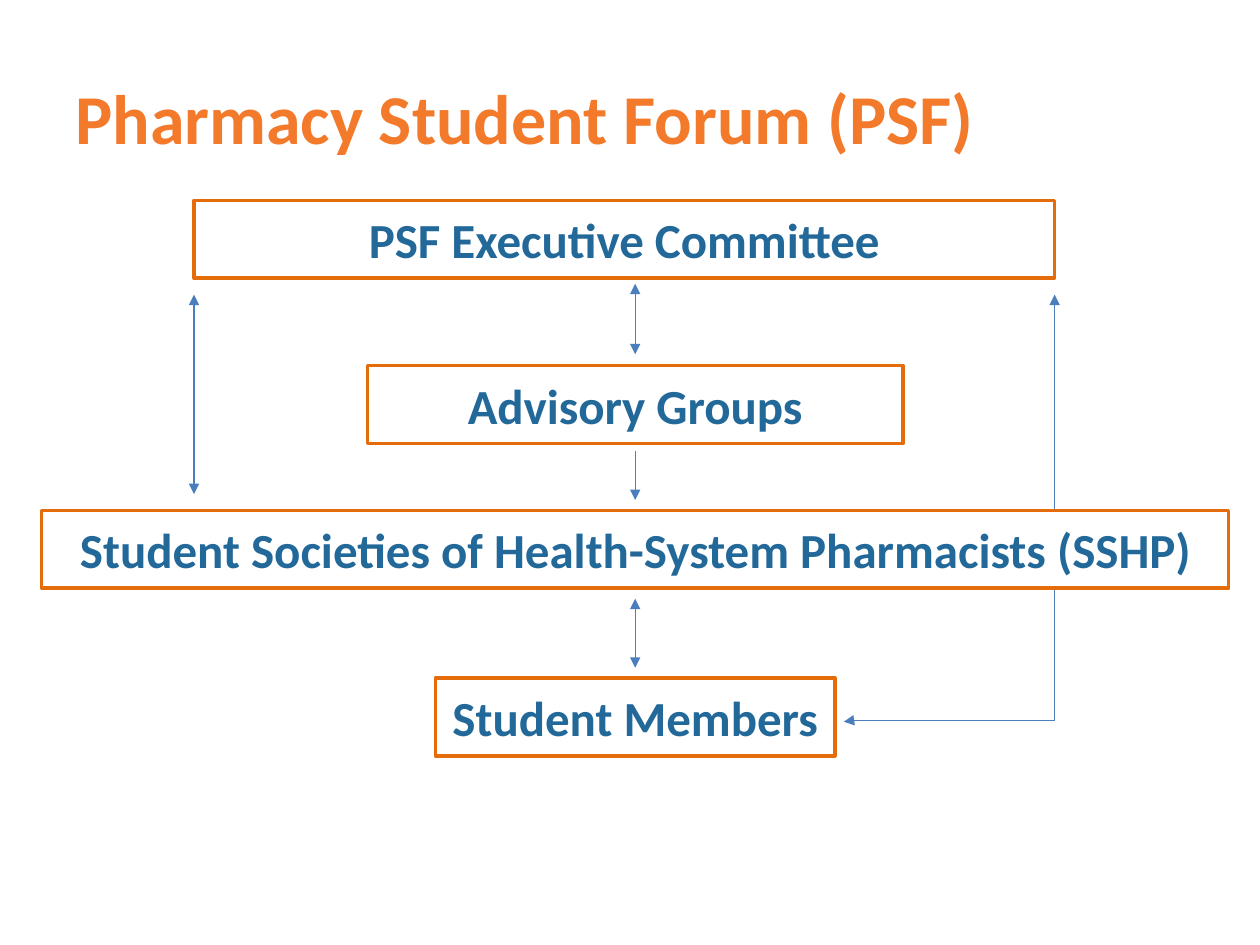
from lxml import etree
from pptx import Presentation
from pptx.dml.color import RGBColor
from pptx.enum.shapes import MSO_CONNECTOR, MSO_SHAPE
from pptx.enum.text import MSO_ANCHOR, PP_ALIGN
from pptx.oxml.ns import qn
from pptx.util import Cm, Pt

RECT = MSO_SHAPE.RECTANGLE
LINE = MSO_CONNECTOR.STRAIGHT
ELBOW = MSO_CONNECTOR.ELBOW
MIDDLE = MSO_ANCHOR.MIDDLE
LEFT = PP_ALIGN.LEFT
CENTER = PP_ALIGN.CENTER

ORANGE = "F37A2B"
BORDER = "E46C0A"
BLUE = "226899"
ARROW = "4B7EBC"
WHITE = "FFFFFF"


def tint(code):
    return RGBColor.from_string(code)


def write(shape, text, size, color, align):
    frame = shape.text_frame
    frame.text = text
    frame.vertical_anchor = MIDDLE
    para = frame.paragraphs[0]
    para.alignment = align
    font = para.runs[0].font
    font.name = "Calibri"
    font.size = Pt(size)
    font.bold = True
    font.color.rgb = tint(color)


def add_title(slide, left, top, width, height):
    box = slide.shapes.add_textbox(Cm(left), Cm(top), Cm(width), Cm(height))
    box.text_frame.word_wrap = True
    write(box, "Pharmacy Student Forum (PSF)", 40, ORANGE, LEFT)


def add_group(slide, text, left, top, width, height):
    box = slide.shapes.add_shape(RECT, Cm(left), Cm(top), Cm(width), Cm(height))
    box.shadow.inherit = False
    box.fill.solid()
    box.fill.fore_color.rgb = tint(WHITE)
    box.line.color.rgb = tint(BORDER)
    box.line.width = Pt(2)
    box.text_frame.word_wrap = False
    write(box, text, 28, BLUE, CENTER)


def add_arrow(slide, kind, start, end, ends=("headEnd", "tailEnd")):
    points = [Cm(value) for value in (*start, *end)]
    arrow = slide.shapes.add_connector(kind, *points)
    arrow.line.color.rgb = tint(ARROW)
    arrow.line.width = Pt(0.75)
    for name in ends:
        tip = etree.SubElement(arrow.line._ln, qn(f"a:{name}"))
        tip.set("type", "triangle")
    etree.SubElement(arrow._element.spPr, qn("a:effectLst"))
    return arrow


def add_elbow(slide, right, top, run, drop):
    left = right - (run + drop) / 2
    upper = top + (drop - run) / 2
    arrow = add_arrow(slide, ELBOW, (left, upper), (left + drop, upper + run))
    props = arrow._element.spPr
    props.find(qn("a:xfrm")).set("rot", "5400000")
    shape = props.find(qn("a:prstGeom"))
    guides = shape.find(qn("a:avLst"))
    if guides is None:
        guides = etree.SubElement(shape, qn("a:avLst"))
    guide = etree.SubElement(guides, qn("a:gd"))
    guide.set("name", "adj1")
    guide.set("fmla", "val 99700")


def add_chart(slide, left, top, width):
    mid = left + width / 2
    edge = left + 3.07
    deep = 1.57
    span = 17.35

    for start, end in ((1.68, 3.1), (8.03, 9.42)):
        add_arrow(slide, LINE, (mid, top + start), (mid, top + end))
    add_arrow(slide, LINE, (mid, top + 5.05), (mid, top + 6.04), ("tailEnd",))
    add_arrow(slide, LINE, (edge, top + 1.9), (edge, top + 5.92))
    add_elbow(slide, edge + span, top + 1.9, 4.25, 8.61)

    add_group(slide, "PSF Executive Committee", edge, top, span, deep)
    groups = (
        ("Advisory Groups", 3.33, 10.8),
        ("Student Members", 9.63, 8.05),
        ("Student Societies of Health-System Pharmacists (SSHP)", 6.25, width),
    )
    for text, down, wide in groups:
        add_group(slide, text, mid - wide / 2, top + down, wide, deep)


def main():
    deck = Presentation()
    deck.slide_width = Cm(25.4)
    deck.slide_height = Cm(19.05)
    slide = deck.slides.add_slide(deck.slide_layouts[6])
    add_title(slide, 1.27, 0.76, 22.86, 3.18)
    add_chart(slide, 0.84, 4.04, 23.93)
    deck.save("out.pptx")


if __name__ == "__main__":
    main()
